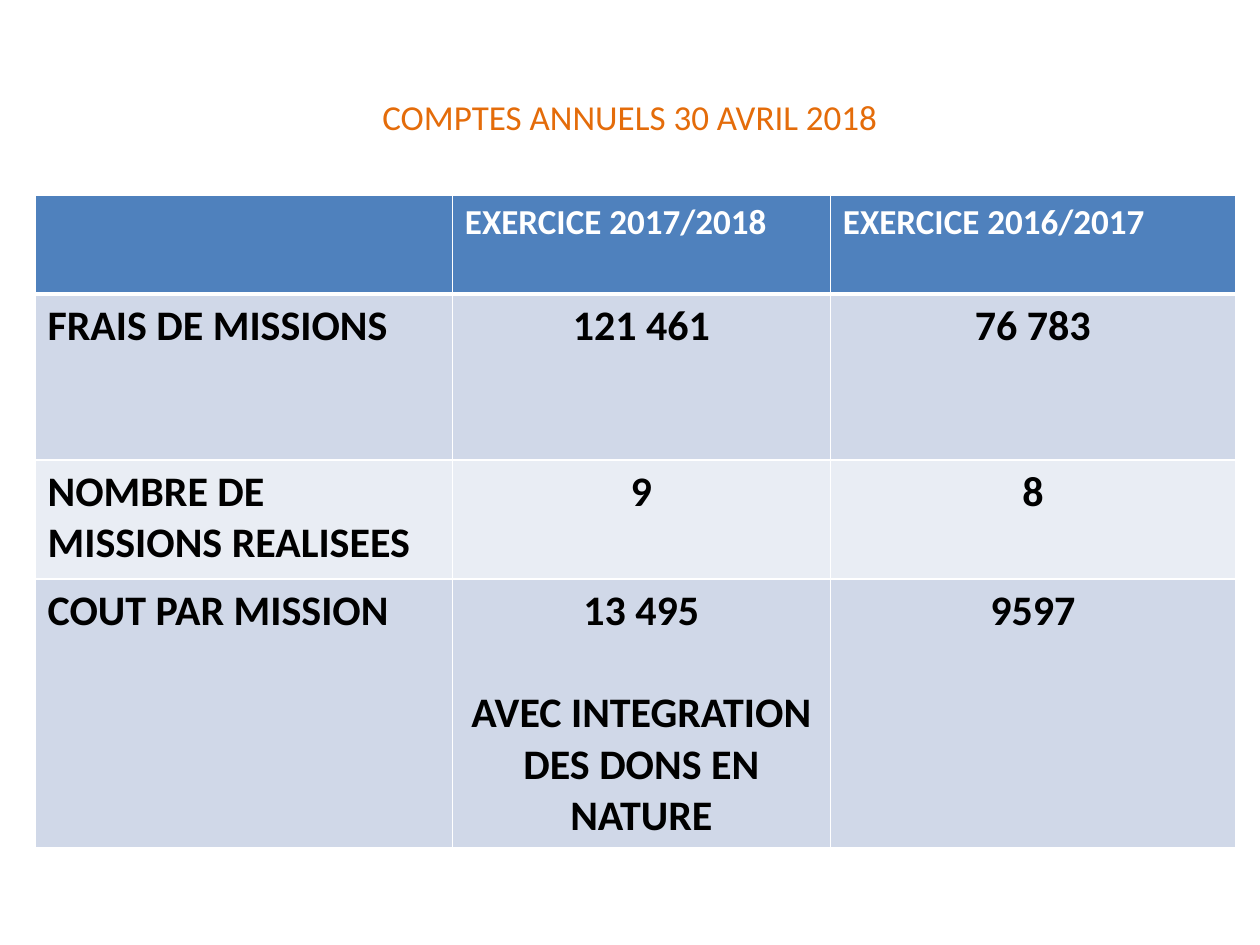
from pptx import Presentation
from pptx.dml.color import RGBColor as RGB
from pptx.enum.text import MSO_ANCHOR as Anchor, PP_ALIGN as Align
from pptx.oxml import parse_xml
from pptx.oxml.ns import nsdecls
from pptx.util import Pt


def hue(code):
    return RGB.from_string(code)


def write(frame, text, size=24, color="000000", bold=True, align=Align.LEFT, gap=0):
    for i, line in enumerate(text.split("\n")):
        par = frame.add_paragraph() if i else frame.paragraphs[0]
        par.alignment = align
        if i:
            par.space_before = Pt(gap)
        run = par.add_run()
        run.text = line
        font = run.font
        font.name, font.size, font.bold = "Calibri", Pt(size), bold
        font.color.rgb = hue(color)


deck = Presentation()
deck.slide_width, deck.slide_height = Pt(720), Pt(540)
slide = deck.slides.add_slide(deck.slide_layouts[5])

title = slide.shapes.title
title.left, title.top, title.width, title.height = Pt(36), Pt(21.6), Pt(648), Pt(90)
title.text_frame.vertical_anchor = Anchor.MIDDLE
write(title.text_frame, "COMPTES ANNUELS 30 AVRIL 2018", size=20,
      color="E46C0A", bold=False, align=Align.CENTER)

rows = [
    ("", "EXERCICE 2017/2018", "EXERCICE 2016/2017"),
    ("FRAIS DE MISSIONS", "121 461", "76 783"),
    ("NOMBRE DE MISSIONS REALISEES", "9", "8"),
    ("COUT PAR MISSION", "13 495\nAVEC INTEGRATION DES DONS EN NATURE", "9597"),
]
wide = [238.5, 216, 231.5]
high = [56.5, 95, 68, 153.5]
fills = ["4F81BD", "D0D8E8", "E9EDF4", "D0D8E8"]

table = slide.shapes.add_table(len(rows), len(wide), Pt(20), Pt(111.5),
                               Pt(sum(wide)), Pt(sum(high))).table
for col, width in zip(table.columns, wide):
    col.width = Pt(width)
for row, height in zip(table.rows, high):
    row.height = Pt(height)

for r, texts in enumerate(rows):
    for c, text in enumerate(texts):
        cell = table.cell(r, c)
        props = cell._tc.get_or_add_tcPr()
        for side in "LRTB":
            thick = 3 if (r, side) in [(0, "B"), (1, "T")] else 1
            props.append(parse_xml(
                f'<a:ln{side} {nsdecls("a")} w="{Pt(thick)}"><a:solidFill>'
                f'<a:srgbClr val="FFFFFF"/></a:solidFill></a:ln{side}>'))
        cell.fill.solid()
        cell.fill.fore_color.rgb = hue(fills[r])
        if not text:
            continue
        if r == 0:
            write(cell.text_frame, text, size=20, color="FFFFFF")
        else:
            write(cell.text_frame, text, gap=29.3,
                  align=Align.CENTER if c else Align.LEFT)

deck.save("out.pptx")
